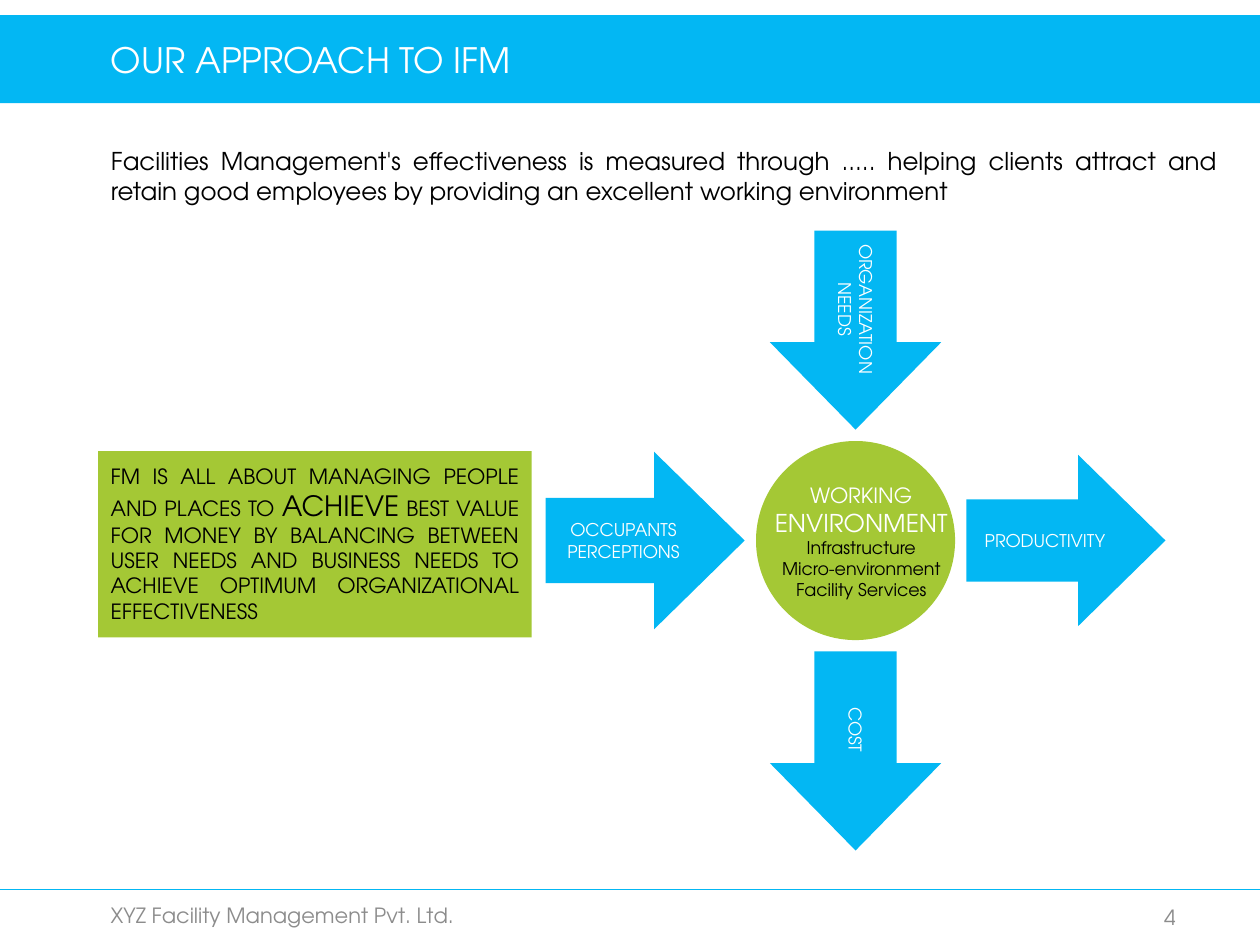
from lxml.etree import SubElement
from pptx import Presentation
from pptx.dml.color import RGBColor
from pptx.enum.shapes import MSO_CONNECTOR, MSO_SHAPE as SHAPE
from pptx.enum.text import MSO_ANCHOR as ANCHOR, MSO_AUTO_SIZE as AUTO, PP_ALIGN as ALIGN
from pptx.oxml.ns import qn
from pptx.util import Inches, Pt

FONT = "TeX Gyre Adventor"
BLUE, GREEN, WHITE, BLACK, GREY = "03B7F3", "A4C835", "FFFFFF", "000000", "8C8C8C"

TITLE = [[("OUR APPROACH TO IFM", 20, WHITE)]]
INTRO = [[("Facilities Management's effectiveness is measured through ..... helping clients "
           "attract and retain good employees by providing an excellent working environment",
           14, BLACK)]]
STATEMENT = [[
    ("FM IS ALL ABOUT MANAGING PEOPLE AND PLACES TO ", 12, BLACK),
    ("ACHIEVE", 16, BLACK),
    (" BEST VALUE FOR MONEY BY BALANCING BETWEEN USER NEEDS AND BUSINESS NEEDS TO "
     "ACHIEVE OPTIMUM ORGANIZATIONAL EFFECTIVENESS", 12, BLACK),
]]
HUB = [
    [("WORKING", 12, WHITE)],
    [("ENVIRONMENT", 14, WHITE)],
    [("Infrastructure", 10, BLACK)],
    [("Micro-environment", 10, BLACK)],
    [("Facility Services", 10, BLACK)],
]
COMPANY = [[("XYZ Facility Management Pvt. Ltd.", 12, GREY)]]
NUMBER = [[("4", 12, GREY)]]
ARROWS = [
    (["OCCUPANTS", "PERCEPTIONS"], -1, 0, 1.41, 0),
    (["PRODUCTIVITY"], 1, 0, 1.36, 0),
    (["COST"], 0, 1, 1.36, 90),
    (["ORGANIZATION", "NEEDS"], 0, -1, 1.36, 90),
]
HUB_X, HUB_Y, HUB_SIZE, ARROW_STEP = 6.79, 4.29, 1.58, 1.67


def rgb(value):
    """Turn a hex string into a colour."""
    return RGBColor.from_string(value)


def write(sp, paragraphs, align=ALIGN.LEFT, anchor=ANCHOR.TOP, ins=(0.1, 0.05), wrap=True, before=0):
    """Fill a shape with formatted paragraphs."""
    tf = sp.text_frame
    tf.auto_size, tf.word_wrap, tf.vertical_anchor = AUTO.NONE, wrap, anchor
    tf.margin_left = tf.margin_right = Inches(ins[0])
    tf.margin_top = tf.margin_bottom = Inches(ins[1])
    for i, runs in enumerate(paragraphs):
        p = tf.add_paragraph() if i else tf.paragraphs[0]
        p.alignment, p.space_before = align, Pt(before)
        for text, size, colour in runs:
            r = p.add_run()
            r.text = text
            r.font.name, r.font.size = FONT, Pt(size)
            r.font.color.rgb = rgb(colour)


def place(sp, x, y, w, h):
    """Move and size a placeholder."""
    sp.left, sp.top, sp.width, sp.height = map(Inches, (x, y, w, h))
    return sp


def block(s, kind, x, y, w, h, colour):
    """Add a flat filled shape."""
    sp = s.shapes.add_shape(kind, *map(Inches, (x, y, w, h)))
    sp.shadow.inherit = False
    sp.fill.solid()
    sp.fill.fore_color.rgb = rgb(colour)
    sp.line.fill.background()
    return sp


def label(s, x, y, w, h, paragraphs, **style):
    """Add a text box."""
    write(s.shapes.add_textbox(*map(Inches, (x, y, w, h))), paragraphs, **style)


def main():
    """Build the slide and save it."""
    prs = Presentation()
    prs.slide_width, prs.slide_height = Inches(10), Inches(7.5)
    s = prs.slides.add_slide(prs.slide_layouts[1])

    band = block(s, SHAPE.RECTANGLE, 0, 0.12, 10, 0.7, BLUE)
    s.shapes.title._element.addprevious(band._element)
    write(place(s.shapes.title, 0.78, 0.12, 8.15, 0.7), TITLE, anchor=ANCHOR.MIDDLE)
    intro = place(s.placeholders[1], 0.78, 1.11, 8.99, 0.57)
    write(intro, INTRO, ALIGN.JUSTIFY, before=8)
    pPr = intro.text_frame.paragraphs[0]._p.get_or_add_pPr()
    pPr.set("marL", "0")
    pPr.set("indent", "0")
    SubElement(pPr, qn("a:buNone"))

    rule = s.shapes.add_connector(MSO_CONNECTOR.STRAIGHT, 0, Inches(7.06), Inches(10), Inches(7.06))
    rule.line.color.rgb, rule.line.width = rgb(BLUE), Pt(1)
    SubElement(rule._element.spPr, qn("a:effectLst"))
    label(s, 0.78, 7.06, 3.17, 0.4, COMPANY, anchor=ANCHOR.MIDDLE)
    label(s, 7.1, 7.08, 2.33, 0.4, NUMBER, align=ALIGN.RIGHT, anchor=ANCHOR.MIDDLE)

    box = block(s, SHAPE.RECTANGLE, 0.78, 3.58, 3.44, 1.48, GREEN)
    write(box, STATEMENT, ALIGN.JUSTIFY, ins=(0.1, 0.1))

    for lines, dx, dy, h, turn in ARROWS:
        x = HUB_X + dx * ARROW_STEP - HUB_SIZE / 2
        y = HUB_Y + dy * ARROW_STEP - h / 2
        arrow = block(s, SHAPE.RIGHT_ARROW, x, y, HUB_SIZE, h, BLUE)
        arrow.adjustments[0], arrow.adjustments[1] = 0.48, 0.51
        arrow.rotation = turn
        write(arrow, [[(line, 10, WHITE)] for line in lines], ALIGN.CENTER, ANCHOR.MIDDLE)

    block(s, SHAPE.OVAL, HUB_X - HUB_SIZE / 2, HUB_Y - HUB_SIZE / 2, HUB_SIZE, HUB_SIZE, GREEN)
    label(s, 6.09, 3.8, 1.49, 1, HUB, align=ALIGN.CENTER, ins=(0.05, 0.03), wrap=False)

    prs.save("out.pptx")


if __name__ == "__main__":
    main()
